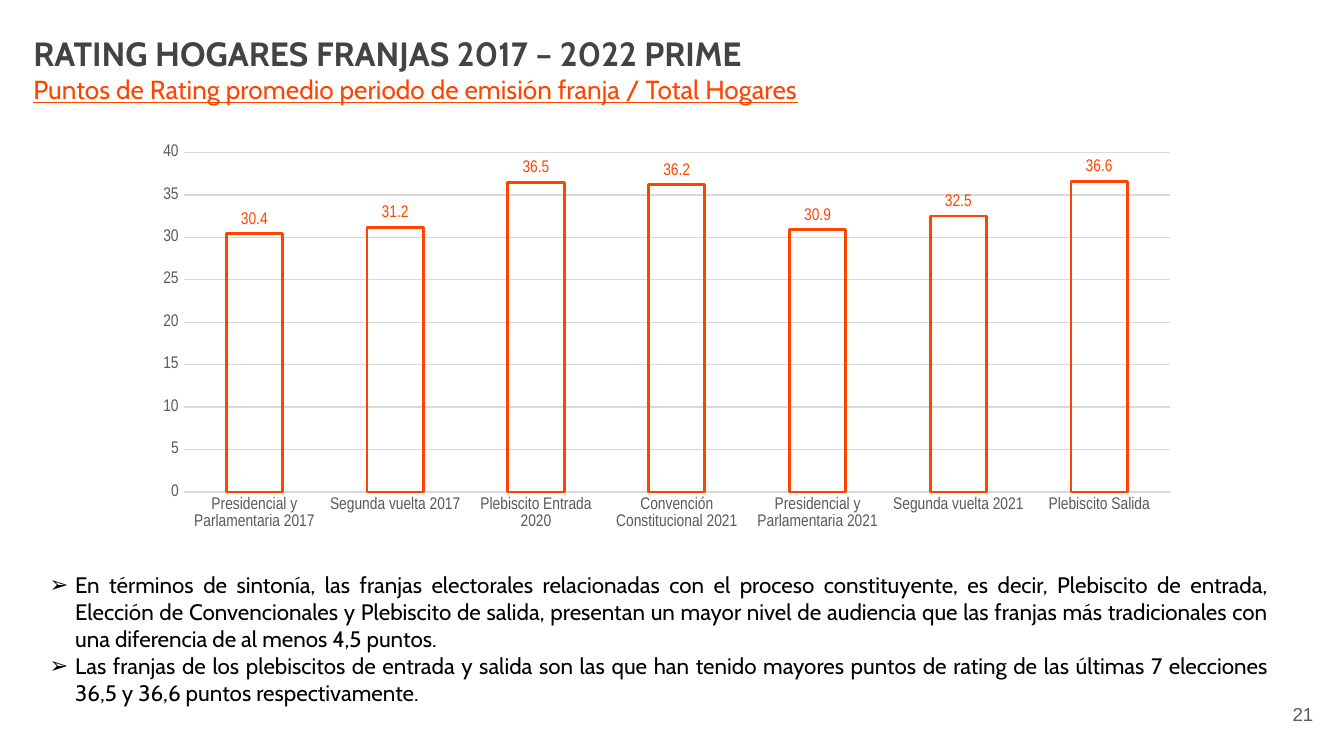
from lxml.etree import SubElement
from pptx import Presentation
from pptx.chart.data import CategoryChartData
from pptx.dml.color import RGBColor
from pptx.enum.chart import XL_CHART_TYPE as ChartType, XL_LABEL_POSITION as LabelPosition
from pptx.enum.chart import XL_TICK_MARK as TickMark
from pptx.enum.text import MSO_ANCHOR as Anchor, PP_ALIGN as Align
from pptx.oxml.ns import qn
from pptx.util import Cm, Pt

ORANGE = "FF4400"
GRAY = "595959"
PALE = "D9D9D9"
BLACK = "000000"

RATINGS = {
    "Presidencial y Parlamentaria 2017": 30.4,
    "Segunda vuelta 2017": 31.2,
    "Plebiscito Entrada 2020": 36.5,
    "Convención Constitucional 2021": 36.2,
    "Presidencial y Parlamentaria 2021": 30.9,
    "Segunda vuelta 2021": 32.5,
    "Plebiscito Salida": 36.6,
}
FINDINGS = [
    "En términos de sintonía, las franjas electorales relacionadas con el proceso "
    "constituyente, es decir, Plebiscito de entrada, Elección de Convencionales y "
    "Plebiscito de salida, presentan un mayor nivel de audiencia que las franjas más "
    "tradicionales con una diferencia de al menos 4,5 puntos.",
    "Las franjas de los plebiscitos de entrada y salida son las que han tenido mayores "
    "puntos de rating de las últimas 7 elecciones 36,5 y 36,6 puntos respectivamente.",
]

TITLE = {"name": "Cabin", "size": Pt(18), "bold": True, "color": "434343"}
SUBTITLE = {"name": "Cabin", "size": Pt(14), "underline": True, "color": ORANGE}
BODY = {"name": "Cabin", "size": Pt(12), "color": BLACK}
PAGE_NUMBER = {"name": "Arial", "size": Pt(10), "color": GRAY}
CHART_TEXT = {"name": "Arial Narrow", "size": Pt(10), "color": BLACK}
AXIS_TEXT = {"name": "Arial Narrow", "size": Pt(9), "color": GRAY}
LABEL_TEXT = {**AXIS_TEXT, "color": ORANGE}


def rgb(code):
    return RGBColor.from_string(code)


def style_font(font, values):
    for key, value in values.items():
        if key == "color":
            font.color.rgb = rgb(value)
        else:
            setattr(font, key, value)


def style_line(line, color, width):
    line.color.rgb = rgb(color)
    line.width = Pt(width)


def add_bullet(para):
    props = para._p.get_or_add_pPr()
    props.set("marL", str(Cm(0.48)))
    props.set("indent", str(-Cm(0.48)))
    color = SubElement(props, qn("a:buClr"))
    SubElement(color, qn("a:srgbClr"), val=BLACK)
    SubElement(props, qn("a:buFont"), typeface="Arial")
    SubElement(props, qn("a:buChar"), char="➢")


def add_text(page, place, lines, align=Align.LEFT, anchor=Anchor.TOP,
             inset=0.25, bullets=False):
    frame = page.shapes.add_textbox(*map(Cm, place)).text_frame
    frame.word_wrap = True
    frame.vertical_anchor = anchor
    frame.margin_top = frame.margin_bottom = Cm(inset)
    for index, (text, values) in enumerate(lines):
        para = frame.add_paragraph() if index else frame.paragraphs[0]
        para.alignment = align
        if bullets:
            add_bullet(para)
        span = para.add_run()
        span.text = text
        style_font(span.font, values)


def style_axis(axis):
    axis.major_tick_mark = axis.minor_tick_mark = TickMark.NONE
    style_font(axis.tick_labels.font, AXIS_TEXT)


def add_rating_chart(page, place):
    data = CategoryChartData(number_format="0.0")
    data.categories = list(RATINGS)
    data.add_series("Series 1", list(RATINGS.values()))
    chart = page.shapes.add_chart(ChartType.COLUMN_CLUSTERED, *map(Cm, place), data).chart
    chart.has_title = chart.has_legend = False
    style_font(chart.font, CHART_TEXT)

    categories, values = chart.category_axis, chart.value_axis
    for axis in (categories, values):
        style_axis(axis)
    style_line(categories.format.line, PALE, 0.75)
    values.format.line.fill.background()
    style_line(values.major_gridlines.format.line, PALE, 0.75)
    values.minimum_scale, values.maximum_scale, values.major_unit = 0, 40, 5
    values.tick_labels.number_format = "0"
    values.tick_labels.number_format_is_linked = False

    plot = chart.plots[0]
    plot.vary_by_categories = False
    plot.gap_width = 150
    series = plot.series[0]
    series.format.fill.background()
    style_line(series.format.line, ORANGE, 1.5)
    labels = series.data_labels
    labels.show_value = True
    labels.position = LabelPosition.OUTSIDE_END
    style_font(labels.font, LABEL_TEXT)


def main():
    deck = Presentation()
    deck.slide_width, deck.slide_height = Cm(25.4), Cm(14.29)
    page = deck.slides.add_slide(deck.slide_layouts[6])
    add_text(page, (23.55, 12.95, 1.52, 1.09), [("21", PAGE_NUMBER)],
             Align.RIGHT, Anchor.MIDDLE)
    add_text(page, (0.38, 0.38, 22.53, 1.57), [
        ("RATING HOGARES FRANJAS 2017 – 2022 PRIME", TITLE),
        ("Puntos de Rating promedio periodo de emisión franja / Total Hogares", SUBTITLE),
    ])
    add_text(page, (0.69, 10.67, 23.55, 2.82), [(text, BODY) for text in FINDINGS],
             Align.JUSTIFY, inset=0.13, bullets=True)
    add_rating_chart(page, (2.69, 2.57, 19.81, 7.62))
    deck.save("out.pptx")


if __name__ == "__main__":
    main()
